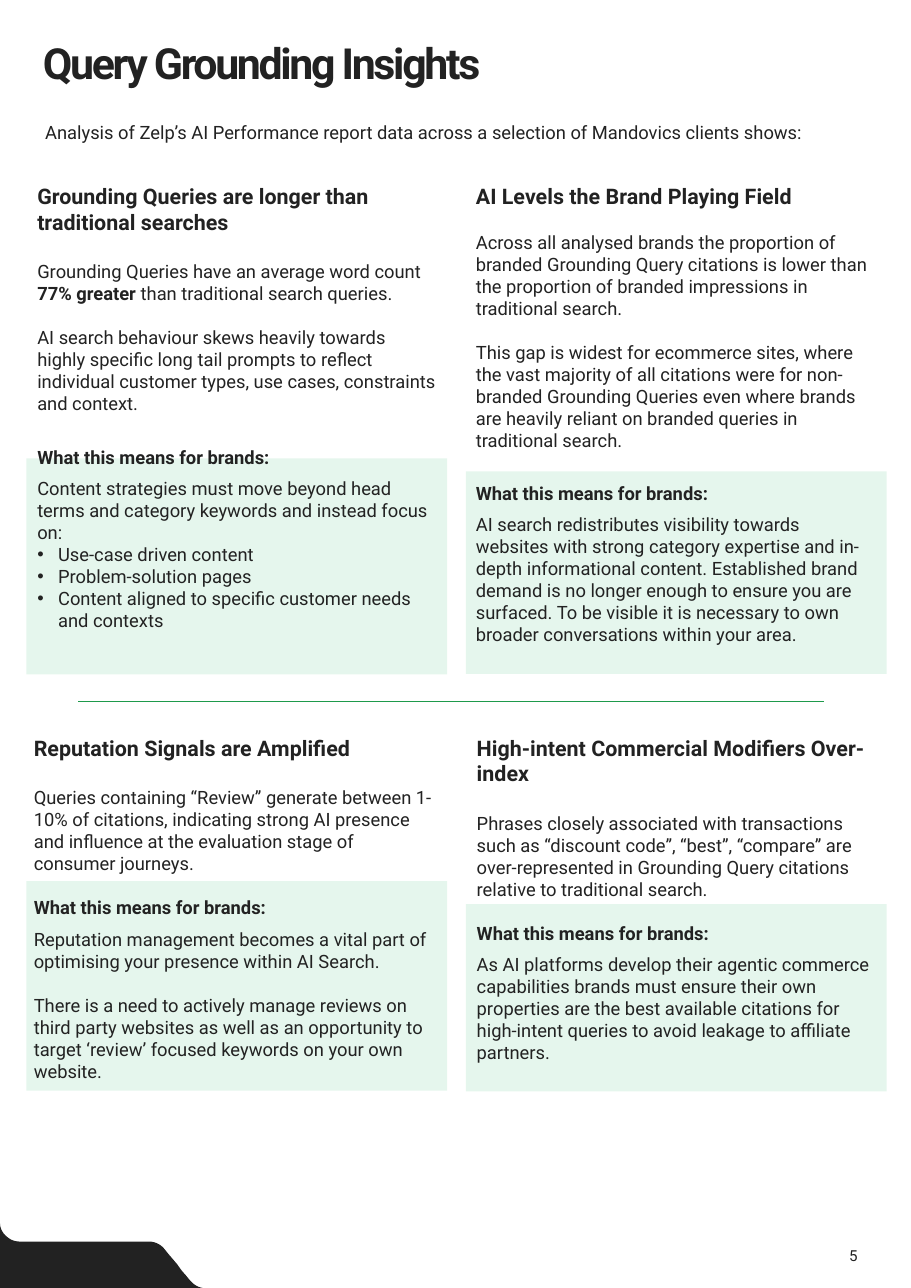
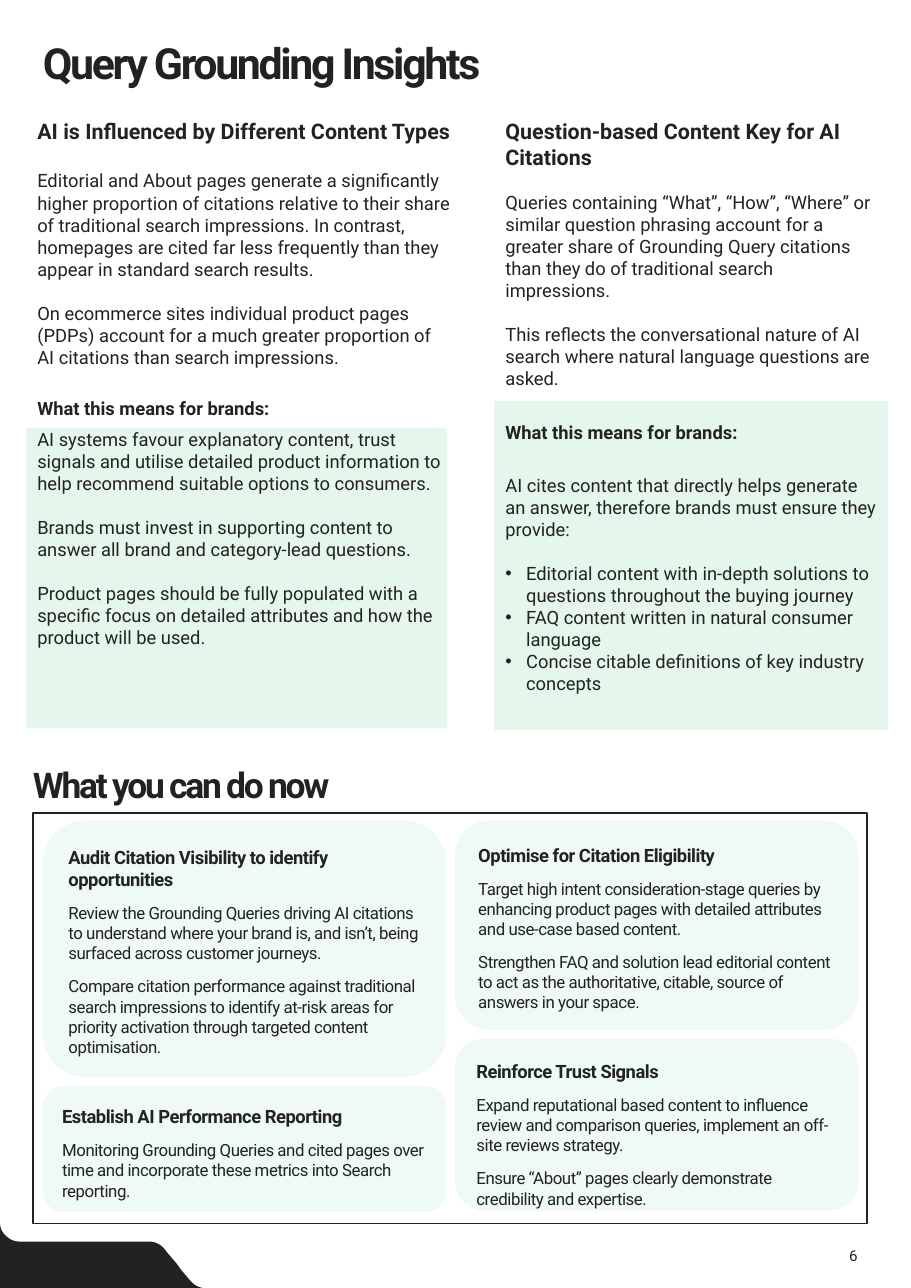
from lxml import etree
from pptx import Presentation
from pptx.dml.color import RGBColor
from pptx.enum.shapes import MSO_CONNECTOR, MSO_SHAPE
from pptx.enum.text import MSO_ANCHOR, MSO_AUTO_SIZE, PP_ALIGN
from pptx.oxml.ns import qn
from pptx.util import Cm, Pt

INK = "222222"
GREEN = "00B050"
RULE_GREEN = "1E9A4B"
FONT = "Roboto"
LINE = 14.4  # height of one line of body text, in points
LABEL_GAP = LINE + 6
HEADING_GAP = 17
CARD_GAP = 8.3
BULLET_INDENT = Cm(0.48)
LABEL = "What this means for brands:"
PAGE_TITLE = "Query Grounding Insights"

STYLES = {
    "title": {"size": 28, "bold": True, "tracking": -150, "line_spacing": 0.9},
    "section": {"size": 23.1, "bold": True, "tracking": -150, "line_spacing": 0.7},
    "heading": {"size": 14, "bold": True},
    "label": {"size": 12, "bold": True, "space_after": Pt(6)},
    "body": {"size": 12},
    "bullet": {"size": 12},
    "card heading": {"size": 12, "bold": True, "tracking": -30},
    "card body": {"size": 11, "tracking": -30},
    "page number": {"size": 9.9, "alignment": PP_ALIGN.RIGHT},
}


def write_text(shape, paragraphs, anchor=MSO_ANCHOR.TOP, margins=(0.25, 0.13, 0.25, 0.13)):
    """Fill a shape with (space before, style, text) entries; ** toggles bold."""
    frame = shape.text_frame
    sides = ("margin_left", "margin_top", "margin_right", "margin_bottom")
    settings = {"word_wrap": True, "auto_size": MSO_AUTO_SIZE.NONE, "vertical_anchor": anchor}
    settings.update(zip(sides, map(Cm, margins)))
    for name, value in settings.items():
        setattr(frame, name, value)
    for index, (gap, style_name, text) in enumerate(paragraphs):
        paragraph = frame.add_paragraph() if index else frame.paragraphs[0]
        style = STYLES[style_name]
        if style_name == "bullet":
            properties = paragraph._p.get_or_add_pPr()
            properties.set("marL", str(BULLET_INDENT))
            properties.set("indent", str(-BULLET_INDENT))
            etree.SubElement(properties, qn("a:buFont")).set("typeface", "Arial")
            etree.SubElement(properties, qn("a:buChar")).set("char", "•")
        layout_values = {"alignment": PP_ALIGN.LEFT, "space_before": Pt(gap), "space_after": Pt(0)}
        for name in ("alignment", "space_after", "line_spacing"):
            if name in style:
                layout_values[name] = style[name]
        for name, value in layout_values.items():
            setattr(paragraph, name, value)
        for part_index, part in enumerate(text.split("**")):
            run = paragraph.add_run()
            run.text = part
            bold = style.get("bold", False) or part_index % 2 == 1
            for name, value in {"name": FONT, "size": Pt(style["size"]), "bold": bold}.items():
                setattr(run.font, name, value)
            run.font.color.rgb = RGBColor.from_string(INK)
            if "tracking" in style:
                run._r.get_or_add_rPr().set("spc", str(style["tracking"]))


def add_panel(slide, kind, box, opacity):
    """Add a pale green panel without outline; opacity is in percent."""
    panel = slide.shapes.add_shape(kind, *map(Cm, box))
    panel.shadow.inherit = False
    panel.line.fill.background()
    panel.fill.solid()
    panel.fill.fore_color.rgb = RGBColor.from_string(GREEN)
    color = panel.element.spPr.find(".//" + qn("a:srgbClr"))
    etree.SubElement(color, qn("a:alpha")).set("val", str(opacity * 1000))
    return panel


PAGES = [
    {
        "bands": [
            (0.61, 10.57, 9.7, 4.98),
            (10.74, 10.87, 9.7, 4.67),
            (0.61, 20.32, 9.7, 4.83),
            (10.74, 20.85, 9.7, 4.32),
        ],
        "texts": [
            ((0.79, 2.67, 19, 0.8), [
                (0, "body", "Analysis of Zelp’s AI Performance report data across a selection of Mandovics clients shows:"),
            ]),
            ((0.61, 4.09, 9.75, 10.69), [
                (0, "heading", "Grounding Queries are longer than traditional searches"),
                (HEADING_GAP, "body", "Grounding Queries have an average word count **77% greater** than traditional search queries."),
                (LINE, "body", "AI search behaviour skews heavily towards highly specific long tail prompts to reflect individual customer types, use cases, constraints and context."),
                (LABEL_GAP, "label", LABEL),
                (0, "body", "Content strategies must move beyond head terms and category keywords and instead focus on:"),
                (0, "bullet", "Use-case driven content"),
                (0, "bullet", "Problem-solution pages"),
                (0, "bullet", "Content aligned to specific customer needs and contexts"),
            ]),
            ((10.72, 4.09, 9.75, 11.02), [
                (0, "heading", "AI Levels the Brand Playing Field"),
                (LINE, "body", "Across all analysed brands the proportion of branded Grounding Query citations is lower than the proportion of branded impressions in traditional search."),
                (LINE, "body", "This gap is widest for ecommerce sites, where the vast majority of all citations were for non-branded Grounding Queries even where brands are heavily reliant on branded queries in traditional search."),
                (LABEL_GAP, "label", LABEL),
                (0, "body", "AI search redistributes visibility towards websites with strong category expertise and in-depth informational content. Established brand demand is no longer enough to ensure you are surfaced. To be visible it is necessary to own broader conversations within your area."),
            ]),
            ((0.53, 16.81, 9.75, 8.33), [
                (0, "heading", "Reputation Signals are Amplified"),
                (HEADING_GAP, "body", "Queries containing “Review” generate between 1-10% of citations, indicating strong AI presence and influence at the evaluation stage of consumer journeys."),
                (LINE, "label", LABEL),
                (0, "body", "Reputation management becomes a vital part of optimising your presence within AI Search."),
                (LINE, "body", "There is a need to actively manage reviews on third party websites as well as an opportunity to target ‘review’ focused keywords on your own website."),
            ]),
            ((10.74, 16.81, 9.75, 7.9), [
                (0, "heading", "High-intent Commercial Modifiers Over-index"),
                (HEADING_GAP, "body", "Phrases closely associated with transactions such as “discount code”, “best”, “compare” are over-represented in Grounding Query citations relative to traditional search."),
                (LINE, "label", LABEL),
                (0, "body", "As AI platforms develop their agentic commerce capabilities brands must ensure their own properties are the best available citations for high-intent queries to avoid leakage to affiliate partners."),
            ]),
        ],
    },
    {
        "bands": [(0.61, 9.86, 9.7, 6.93), (11.4, 9.25, 9.07, 7.59)],
        "texts": [
            ((0.61, 2.59, 10.08, 14.22), [
                (0, "heading", "AI is Influenced by Different Content Types"),
                (HEADING_GAP, "body", "Editorial and About pages generate a significantly higher proportion of citations relative to their share of traditional search impressions. In contrast, homepages are cited far less frequently than they appear in standard search results."),
                (LINE, "body", "On ecommerce sites individual product pages (PDPs) account for a much greater proportion of AI citations than search impressions."),
                (LINE + 4.7, "label", LABEL),
                (0, "body", "AI systems favour explanatory content, trust signals and utilise detailed product information to help recommend suitable options to consumers."),
                (LINE, "body", "Brands must invest in supporting content to answer all brand and category-lead questions."),
                (LINE, "body", "Product pages should be fully populated with a specific focus on detailed attributes and how the product will be used."),
            ]),
            ((11.4, 2.59, 9.07, 14.7), [
                (0, "heading", "Question-based Content Key for AI Citations"),
                (LINE, "body", "Queries containing “What”, “How”, “Where” or similar question phrasing account for a greater share of Grounding Query citations than they do of traditional search impressions."),
                (LINE, "body", "This reflects the conversational nature of AI search where natural language questions are asked."),
                (LABEL_GAP, "label", LABEL),
                (LINE, "body", "AI cites content that directly helps generate an answer, therefore brands must ensure they provide:"),
                (LINE, "bullet", "Editorial content with in-depth solutions to questions throughout the buying journey"),
                (0, "bullet", "FAQ content written in natural consumer language"),
                (0, "bullet", "Concise citable definitions of key industry concepts"),
            ]),
        ],
    },
]

CARD_WIDTH = 9.3
CARDS = [  # left, top, height, heading, body paragraphs
    (0.99, 18.92, 5.92, "Audit Citation Visibility to identify opportunities", [
        "Review the Grounding Queries driving AI citations to understand where your brand is, and isn’t, being surfaced across customer journeys.",
        "Compare citation performance against traditional search impressions to identify at-risk areas for priority activation through targeted content optimisation.",
    ]),
    (10.49, 18.92, 4.83, "Optimise for Citation Eligibility", [
        "Target high intent consideration-stage queries by enhancing product pages with detailed attributes and use-case based content.",
        "Strengthen FAQ and solution lead editorial content to act as the authoritative, citable, source of answers in your space.",
    ]),
    (0.99, 25.04, 2.92, "Establish AI Performance Reporting", [
        "Monitoring Grounding Queries and cited pages over time and incorporate these metrics into Search reporting.",
    ]),
    (10.49, 23.95, 3.96, "Reinforce Trust Signals", [
        "Expand reputational based content to influence review and comparison queries, implement an off-site reviews strategy.",
        "Ensure “About” pages clearly demonstrate credibility and expertise.",
    ]),
]

# Footer tab outline in cm: a start point, then Bézier segments (two controls, end)
TAB_START = (0, 28.2)
TAB_CURVES = [
    ((0, 28.34), (0.08, 28.47), (0.2, 28.55)),
    ((0.33, 28.65), (0.48, 28.63), (0.64, 28.63)),
    ((1.5, 28.63), (2.5, 28.63), (3.43, 28.63)),
    ((3.58, 28.63), (3.71, 28.7), (3.79, 28.8)),
    ((3.89, 28.93), (3.99, 29.04), (4.09, 29.16)),
    ((4.14, 29.23), (4.19, 29.31), (4.27, 29.39)),
    ((4.37, 29.51), (4.47, 29.67), (4.67, 29.7)),
]
CURVE_STEPS = 8

presentation = Presentation()
presentation.slide_width = Cm(21)
presentation.slide_height = Cm(29.7)
layout = presentation.slide_layouts[5]
for placeholder in list(layout.placeholders):
    if placeholder.placeholder_format.idx:
        layout.shapes.element.remove(placeholder.element)
title_box = dict(zip(("left", "top", "width", "height"), map(Cm, (0.99, 0.99, 19, 2.97))))
for name, value in title_box.items():
    setattr(layout.placeholders[0], name, value)

slides = []
for number, page in enumerate(PAGES, start=5):
    slide = presentation.slides.add_slide(layout)
    slides.append(slide)
    for name, value in title_box.items():
        setattr(slide.shapes.title, name, value)
    write_text(slide.shapes.title, [(0, "title", PAGE_TITLE)], margins=(0, 0, 0.25, 0.13))
    for box in page["bands"]:
        add_panel(slide, MSO_SHAPE.RECTANGLE, box, 10)
    page_number = ((18.01, 28.47, 2.01, 0.94), [(0, "page number", str(number))])
    for box, paragraphs in page["texts"]:
        write_text(slide.shapes.add_textbox(*map(Cm, box)), paragraphs)
    box, paragraphs = page_number
    write_text(slide.shapes.add_textbox(*map(Cm, box)), paragraphs, MSO_ANCHOR.MIDDLE)

first_slide, second_slide = slides

# The footer tab is drawn once and moved to the layout both slides share
points = [TAB_START]
for control_1, control_2, end in TAB_CURVES:
    start = points[-1]
    for step in range(1, CURVE_STEPS + 1):
        t = step / CURVE_STEPS
        weights = ((1 - t) ** 3, 3 * t * (1 - t) ** 2, 3 * t * t * (1 - t), t ** 3)
        corners = (start, control_1, control_2, end)
        points.append(tuple(sum(w * c[axis] for w, c in zip(weights, corners)) for axis in (0, 1)))
points.append((0, 29.7))
outline = [(Cm(x), Cm(y)) for x, y in points]
builder = first_slide.shapes.build_freeform(*outline[0])
builder.add_line_segments(outline[1:], close=True)
footer_tab = builder.convert_to_shape()
footer_tab.shadow.inherit = False
footer_tab.fill.solid()
footer_tab.fill.fore_color.rgb = RGBColor.from_string(INK)
footer_tab.line.fill.background()
layout.shapes.element.append(footer_tab.element)

divider = first_slide.shapes.add_connector(
    MSO_CONNECTOR.STRAIGHT, Cm(1.8), Cm(16.18), Cm(19), Cm(16.18))
divider.line.color.rgb = RGBColor.from_string(RULE_GREEN)
divider.line.width = Pt(0.5)
etree.SubElement(divider.element.spPr, qn("a:effectLst"))

section = second_slide.shapes.add_textbox(Cm(0.76), Cm(17.86), Cm(20), Cm(0.89))
write_text(section, [(0, "section", "What you can do now")], margins=(0, 0, 0.25, 0.13))
border = second_slide.shapes.add_shape(
    MSO_SHAPE.RECTANGLE, Cm(0.76), Cm(18.75), Cm(19.23), Cm(9.47))
border.shadow.inherit = False
border.fill.background()
border.line.color.rgb = RGBColor.from_string(INK)
border.line.width = Pt(1)
for left, top, height, heading, bodies in CARDS:
    card = add_panel(second_slide, MSO_SHAPE.ROUNDED_RECTANGLE, (left, top, CARD_WIDTH, height), 6)
    paragraphs = [(0, "card heading", heading)]
    paragraphs += [(CARD_GAP, "card body", body) for body in bodies]
    write_text(card, paragraphs, margins=(0.3, 0.3, 0.2, 0.3))

presentation.save("out.pptx")
